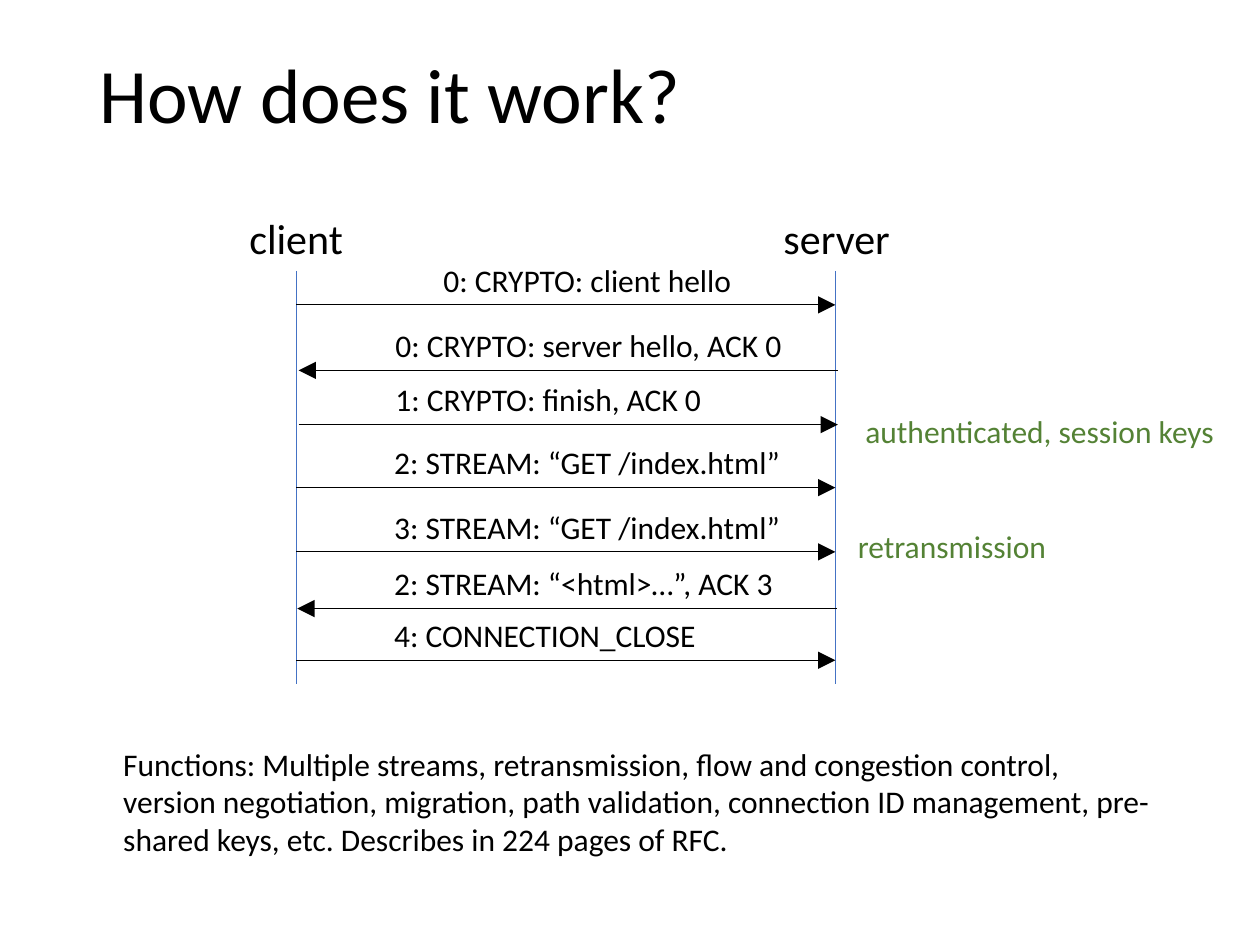
from lxml.etree import SubElement
from pptx import Presentation
from pptx.dml.color import RGBColor
from pptx.enum.shapes import MSO_CONNECTOR
from pptx.enum.text import MSO_ANCHOR, MSO_AUTO_SIZE
from pptx.oxml.ns import qn
from pptx.util import Inches, Pt

BLACK = RGBColor(0x00, 0x00, 0x00)
BLUE = RGBColor(0x44, 0x72, 0xC4)
GREEN = RGBColor(0x54, 0x82, 0x35)

LIFELINES = [("client", 1.88, 0.95, 2.35), ("server", 6.12, 1.06, 6.63)]
MESSAGES = [
    ("0: CRYPTO: client hello", 3.42, 2.51, 2.35, 2.42, "tailEnd"),
    ("0: CRYPTO: server hello, ACK 0", 3.04, 3.3, 2.37, 2.94, "headEnd"),
    ("1: CRYPTO: finish, ACK 0", 3.04, 2.66, 2.37, 3.37, "tailEnd"),
    ("2: STREAM: “GET /index.html”", 3.03, 3.3, 2.35, 3.87, "tailEnd"),
    ("3: STREAM: “GET /index.html”", 3.03, 3.3, 2.35, 4.38, "tailEnd"),
    ("2: STREAM: “<html>…”, ACK 3", 3.03, 3.24, 2.36, 4.83, "headEnd"),
    ("4: CONNECTION_CLOSE", 3.03, 2.62, 2.35, 5.24, "tailEnd"),
]
NOTES = [
    ("authenticated, session keys", 6.77, 3.22, 3),
    ("retransmission", 6.71, 4.13, 1.71),
]
SUMMARY = (
    "Functions: Multiple streams, retransmission, flow and congestion control, "
    "version negotiation, migration, path validation, connection ID management, "
    "pre-shared keys, etc. Describes in 224 pages of RFC."
)


class SequencePage:
    """Draws the parts of a sequence diagram in one style on one page."""

    font = "Calibri"
    line_width = Pt(0.5)
    message_span = 4.28

    def __init__(self, page):
        self.page = page

    def text(self, shapes, text, left, top, width, height,
             size=18, color=BLACK, wrap=False):
        box = shapes.add_textbox(
            Inches(left), Inches(top), Inches(width), Inches(height))
        frame = box.text_frame
        frame.text = text
        frame.word_wrap = wrap
        frame.auto_size = MSO_AUTO_SIZE.SHAPE_TO_FIT_TEXT
        font = frame.paragraphs[0].runs[0].font
        font.name, font.size = self.font, Pt(size)
        font.color.rgb = color
        return box

    def line(self, shapes, start, end, color, arrow=None):
        line = shapes.add_connector(
            MSO_CONNECTOR.STRAIGHT, *map(Inches, start + end))
        line.line.color.rgb = color
        line.line.width = self.line_width
        if arrow:
            SubElement(line.line._get_or_add_ln(), qn(f"a:{arrow}"),
                       type="triangle", w="lg", len="lg")
        SubElement(line._element.spPr, qn("a:effectLst"))

    def title(self, text):
        box = self.text(self.page.shapes, text, 0.69, 0.4, 8.62, 0.76, 44, wrap=True)
        frame = box.text_frame
        frame.auto_size = MSO_AUTO_SIZE.NONE
        frame.vertical_anchor = MSO_ANCHOR.MIDDLE
        frame.paragraphs[0].line_spacing = 0.9

    def lifeline(self, name, left, width, x):
        shapes = self.page.shapes.add_group_shape().shapes
        self.text(shapes, name, left, 1.64, width, 0.5, 24)
        self.line(shapes, (x, 2.15), (x, 5.43), BLUE)

    def message(self, label, left, width, x, y, arrow):
        shapes = self.page.shapes.add_group_shape().shapes
        self.line(shapes, (x, y), (x + self.message_span, y), BLACK, arrow)
        self.text(shapes, label, left, y - 0.4, width, 0.4)

    def note(self, text, left, top, width):
        self.text(self.page.shapes, text, left, top, width, 0.4, color=GREEN)

    def summary(self, text):
        self.text(self.page.shapes, text, 0.88, 5.86, 8.37, 1.01, wrap=True)


def main():
    deck = Presentation()
    deck.slide_width, deck.slide_height = Inches(10), Inches(7.5)
    diagram = SequencePage(deck.slides.add_slide(deck.slide_layouts[6]))
    diagram.title("How does it work?")
    for lifeline in LIFELINES:
        diagram.lifeline(*lifeline)
    for message in MESSAGES:
        diagram.message(*message)
    for note in NOTES:
        diagram.note(*note)
    diagram.summary(SUMMARY)
    deck.save("out.pptx")


if __name__ == "__main__":
    main()
